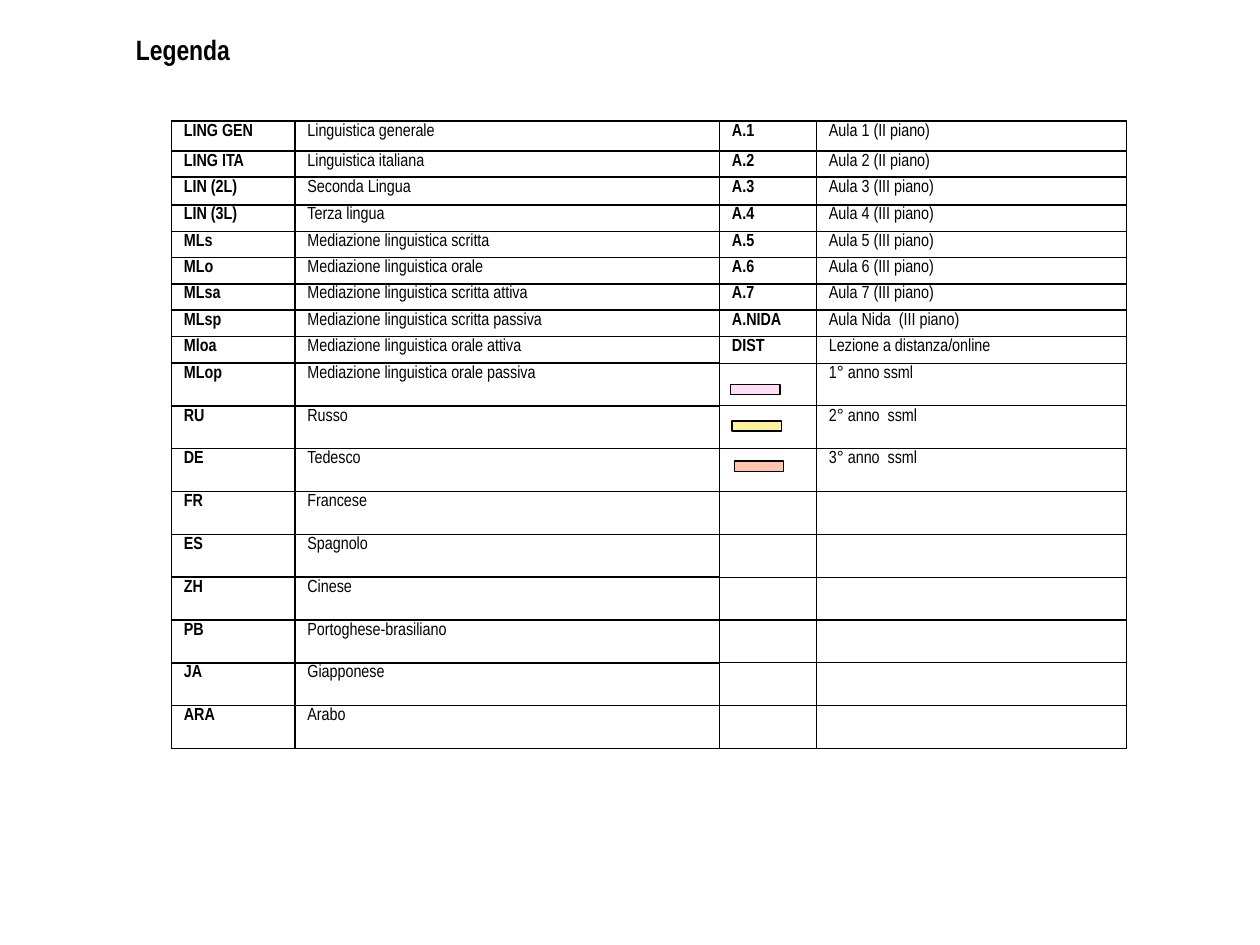
import pptx
import pptx.dml.color
import pptx.enum.shapes
import pptx.enum.text
import pptx.oxml.ns
import pptx.util
from lxml import etree
from pptx.util import Inches

COLORS = {"black": "000000", "pink": "FFDDF4", "yellow": "FEF29A", "peach": "FFC5AB"}
FONT = "Arial Narrow"
BODY_SIZE = 10
COLUMN_WIDTHS = [0.98, 3.37, 0.77, 2.46]
ROW_HEIGHTS = [0.24, 0.2, 0.22, 0.21, 0.21, 0.2, 0.21, 0.21, 0.21] + [0.34] * 9
FIRST_THIN_ROW = 7
FIRST_THIN_COLUMN = 2
SUBJECTS = [
    ("LING GEN", "Linguistica generale"),
    ("LING ITA", "Linguistica italiana"),
    ("LIN (2L)", "Seconda Lingua"),
    ("LIN (3L)", "Terza lingua"),
    ("MLs", "Mediazione linguistica scritta"),
    ("MLo", "Mediazione linguistica orale"),
    ("MLsa", "Mediazione linguistica scritta attiva"),
    ("MLsp", "Mediazione linguistica scritta passiva"),
    ("Mloa", "Mediazione linguistica orale attiva"),
    ("MLop", "Mediazione linguistica orale passiva"),
    ("RU", "Russo"),
    ("DE", "Tedesco"),
    ("FR", "Francese"),
    ("ES", "Spagnolo"),
    ("ZH", "Cinese"),
    ("PB", "Portoghese-brasiliano"),
    ("JA", "Giapponese"),
    ("ARA", "Arabo"),
]
ROOMS = [
    ("A.1", "Aula 1 (II piano)"),
    ("A.2", "Aula 2 (II piano)"),
    ("A.3", "Aula 3 (III piano)"),
    ("A.4", "Aula 4 (III piano)"),
    ("A.5", "Aula 5 (III piano)"),
    ("A.6", "Aula 6 (III piano)"),
    ("A.7", "Aula 7 (III piano)"),
    ("A.NIDA", "Aula Nida  (III piano)"),
    ("DIST", "Lezione a distanza/online"),
    ("", "1° anno ssml"),
    ("", "2° anno  ssml"),
    ("", "3° anno  ssml"),
]
YEAR_SWATCHES = [(5.8, 3.05, "pink"), (5.81, 3.34, "yellow"), (5.83, 3.66, "peach")]


def rgb(name):
    return pptx.dml.color.RGBColor.from_string(COLORS[name])


def write_text(frame, text, *, size, bold=False, color="black"):
    para = frame.paragraphs[0]
    if not text:
        end = etree.SubElement(para._p, pptx.oxml.ns.qn("a:endParaRPr"))
        end.set("sz", str(size * 100))
        return
    span = para.add_run()
    span.text = text
    span.font.name = FONT
    span.font.size = pptx.util.Pt(size)
    span.font.bold = bold
    span.font.color.rgb = rgb(color)


def set_borders(cell, widths):
    properties = cell._tc.get_or_add_tcPr()
    for index, (side, width) in enumerate(widths.items()):
        line = etree.Element(pptx.oxml.ns.qn(f"a:ln{side}"), w=str(pptx.util.Pt(width)))
        fill = etree.SubElement(line, pptx.oxml.ns.qn("a:solidFill"))
        etree.SubElement(fill, pptx.oxml.ns.qn("a:srgbClr"), val=COLORS["black"])
        properties.insert(index, line)


def border_widths(row, column):
    thin = row >= FIRST_THIN_ROW and column >= FIRST_THIN_COLUMN
    widths = dict.fromkeys("LRTB", 0.75 if thin else 1)
    if thin and column == FIRST_THIN_COLUMN:
        widths["L"] = 1
    if thin and row == FIRST_THIN_ROW:
        widths["T"] = 1
    return widths


def add_title(page, text):
    box = page.shapes.add_textbox(Inches(0.98), Inches(0.21), Inches(1), Inches(0.37))
    frame = box.text_frame
    frame.word_wrap = True
    frame.vertical_anchor = pptx.enum.text.MSO_ANCHOR.MIDDLE
    write_text(frame, text, size=16, bold=True)


def add_legend_table(page):
    table = page.shapes.add_table(
        len(ROW_HEIGHTS), len(COLUMN_WIDTHS), Inches(1.36), Inches(0.96),
        Inches(sum(COLUMN_WIDTHS)), Inches(sum(ROW_HEIGHTS))).table
    table.first_row = False
    table.horz_banding = False
    for column, width in zip(table.columns, COLUMN_WIDTHS):
        column.width = Inches(width)
    for row, height in zip(table.rows, ROW_HEIGHTS):
        row.height = Inches(height)
    rooms = ROOMS + [("", "")] * (len(SUBJECTS) - len(ROOMS))
    for row, (subject, room) in enumerate(zip(SUBJECTS, rooms)):
        for column, text in enumerate(subject + room):
            cell = table.cell(row, column)
            cell.margin_left = cell.margin_right = Inches(0.1)
            cell.margin_top = cell.margin_bottom = Inches(0.02)
            cell.fill.background()
            write_text(cell.text_frame, text, size=BODY_SIZE, bold=column % 2 == 0)
            set_borders(cell, border_widths(row, column))


def add_swatch(page, left, top, color):
    swatch = page.shapes.add_shape(
        pptx.enum.shapes.MSO_SHAPE.RECTANGLE,
        Inches(left), Inches(top), Inches(0.39), Inches(0.08))
    swatch.shadow.inherit = False
    swatch.fill.solid()
    swatch.fill.fore_color.rgb = rgb(color)
    swatch.line.color.rgb = rgb("black")
    swatch.line.width = pptx.util.Pt(0.75)


def main():
    deck = pptx.Presentation()
    deck.slide_width = Inches(10)
    deck.slide_height = Inches(7.5)
    page = deck.slides.add_slide(deck.slide_layouts[6])
    add_title(page, "Legenda")
    add_legend_table(page)
    for left, top, color in YEAR_SWATCHES:
        add_swatch(page, left, top, color)
    deck.save("out.pptx")


if __name__ == "__main__":
    main()
